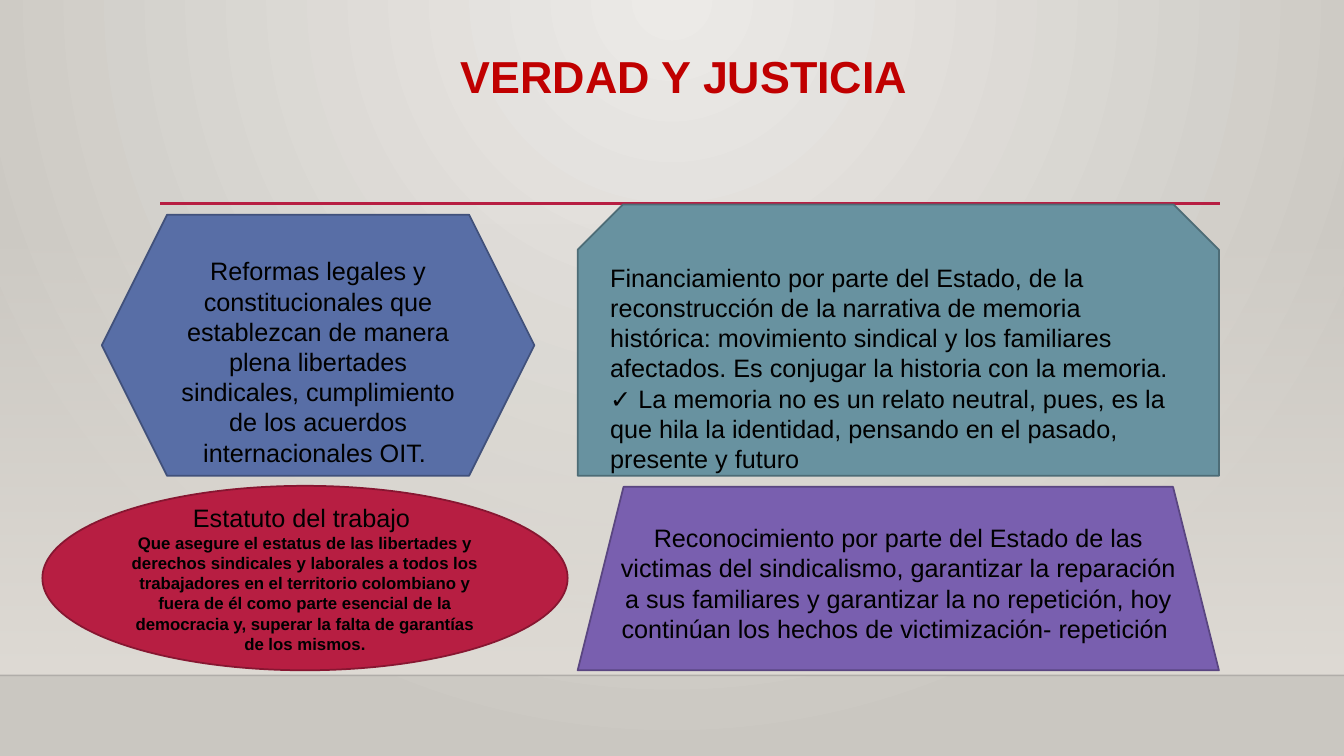
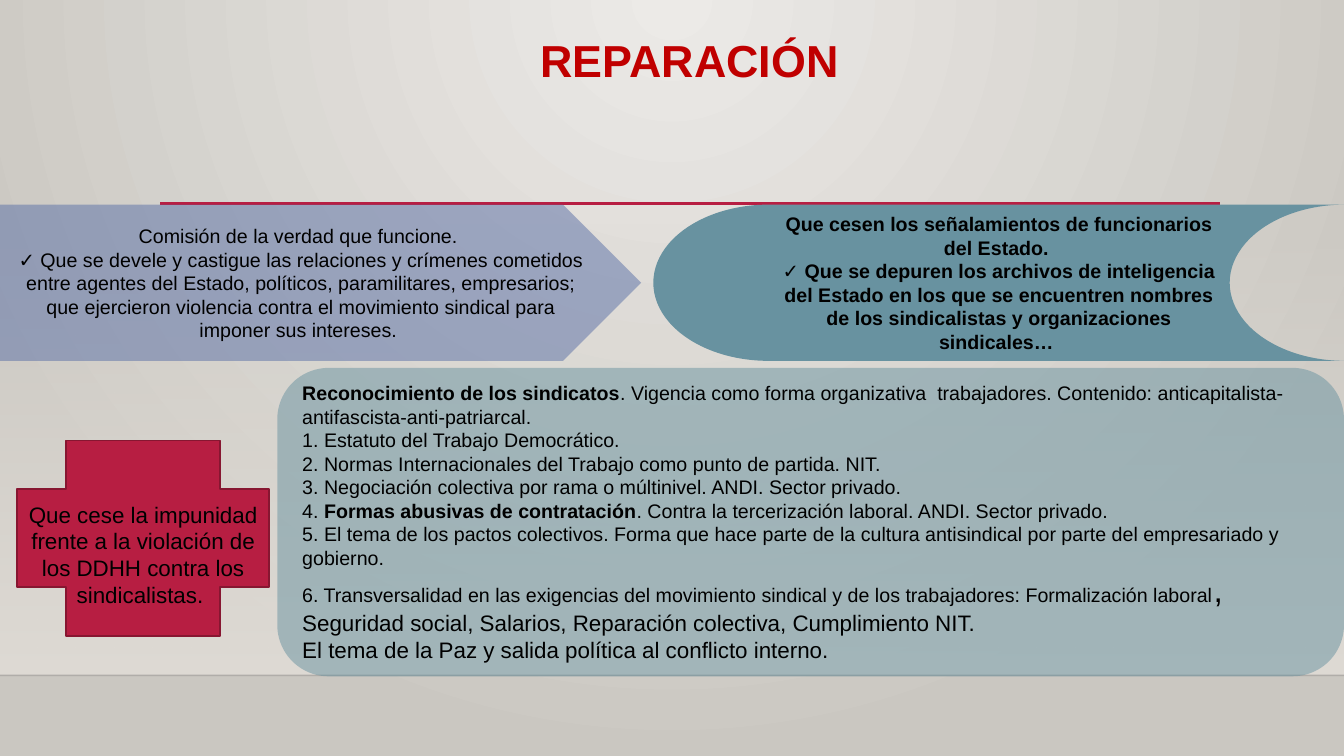
"""Two slides on truth, justice and reparation for trade unions."""
from lxml import etree
from pptx import Presentation
from pptx.dml.color import RGBColor
from pptx.enum import shapes, text
from pptx.oxml import ns
from pptx.util import Inches, Pt

FONT = "Arial"
HUE = {
    "ink": "000000", "title": "C00000", "glow": "ECEAE7", "edge": "CAC7C1",
    "band": "DFDBD5", "floor": "000001", "red": "B71E42", "wine": "871631",
    "blue": "586EA6", "navy": "41517B", "teal": "6892A0", "slate": "4D6C76",
    "plum": "795FAF", "grape": "5A4681",
}
KIND = shapes.MSO_SHAPE
MID, LEFT = text.PP_ALIGN.CENTER, text.PP_ALIGN.LEFT
TOP, HALF = text.MSO_ANCHOR.TOP, text.MSO_ANCHOR.MIDDLE
DROP = 0.37

DECK = [
    {
        "title": "VERDAD Y JUSTICIA ", "top": 0.49,
        "parts": [
            {"kind": KIND.HEXAGON, "at": (1.01, 2.13, 4.29, 2.59),
             "fill": "blue", "line": "navy", "form": {"size": 18, "inset": DROP},
             "text": ["Reformas legales y constitucionales que establezcan de manera plena "
                      "libertades sindicales, cumplimiento de los acuerdos internacionales OIT. "]},
            {"kind": KIND.SNIP_2_SAME_RECTANGLE, "at": (5.73, 2.03, 6.36, 2.69),
             "fill": "teal", "line": "slate",
             "form": {"size": 18, "inset": DROP, "align": LEFT},
             "text": ["Financiamiento por parte del Estado, de la reconstrucción de la narrativa "
                      "de memoria histórica: movimiento sindical y los familiares afectados. "
                      "Es conjugar la historia con la memoria.",
                      "✓ La memoria no es un relato neutral, pues, es la que hila la identidad, "
                      "pensando en el pasado, presente y futuro"]},
            {"kind": KIND.OVAL, "at": (0.42, 4.82, 5.21, 1.83),
             "fill": "red", "line": "wine", "form": {"size": 18},
             "text": ["Estatuto del trabajo ",
                      [("Que asegure el estatus de las libertades y derechos sindicales y "
                        "laborales a todos los trabajadores en el territorio colombiano y fuera "
                        "de él como parte esencial de la democracia y, superar la falta de "
                        "garantías de los mismos.", {"size": 12, "bold": True})]]},
            {"kind": KIND.TRAPEZOID, "at": (5.73, 4.83, 6.36, 1.82),
             "fill": "plum", "line": "grape", "form": {"size": 18},
             "text": ["Reconocimiento por parte del Estado de las victimas del sindicalismo, "
                      "garantizar la reparación a sus familiares y garantizar la no repetición, "
                      "hoy continúan los hechos de victimización- repetición "]},
        ],
    },
    {
        "title": "REPARACIÓN", "top": 0.34,
        "parts": [
            {"kind": KIND.PENTAGON, "at": (0, 2.03, 6.36, 1.55),
             "fill": "blue", "alpha": 50, "form": {"size": 14},
             "text": ["Comisión de la verdad que funcione. ",
                      "✓ Que se devele y castigue las relaciones y crímenes cometidos entre "
                      "agentes del Estado, políticos, paramilitares, empresarios; que ejercieron "
                      "violencia contra el movimiento sindical para imponer sus intereses. "]},
            {"kind": KIND.FLOWCHART_STORED_DATA, "at": (6.48, 2.03, 6.86, 1.55),
             "fill": "teal", "form": {"size": 14, "bold": True},
             "text": ["Que cesen los señalamientos de funcionarios del Estado. ",
                      "✓ Que se depuren los archivos de inteligencia del Estado en los que se "
                      "encuentren nombres de los sindicalistas y organizaciones sindicales… "]},
            {"kind": KIND.CROSS, "at": (0.17, 4.37, 2.5, 1.94),
             "fill": "red", "line": "wine", "form": {"size": 16, "inset": DROP},
             "text": ["Que cese la impunidad frente a la violación de los DDHH contra los "
                      "sindicalistas. "]},
            {"kind": KIND.FLOWCHART_ALTERNATE_PROCESS, "at": (2.75, 3.65, 10.58, 3.06),
             "fill": "teal", "alpha": 50, "form": {"size": 14, "align": LEFT},
             "text": [[("Reconocimiento de los sindicatos", {"bold": True}),
                       (". Vigencia como forma organizativa  trabajadores. Contenido: "
                        "anticapitalista-antifascista-anti-patriarcal.", {})],
                      "1. Estatuto del Trabajo Democrático.",
                      "2. Normas Internacionales del Trabajo como punto de partida. NIT.",
                      "3. Negociación colectiva por rama o múltinivel. ANDI. Sector privado.",
                      [("4. ", {}), ("Formas abusivas de contratación", {"bold": True}),
                       (". Contra la tercerización laboral. ANDI. Sector privado.", {})],
                      "5. El tema de los pactos colectivos. Forma que hace parte de la cultura "
                      "antisindical por parte del empresariado y gobierno.",
                      [("6. Transversalidad en las exigencias del movimiento sindical y de los "
                        "trabajadores: Formalización laboral", {}), (", ", {"size": 24}),
                       ("Seguridad social, Salarios, Reparación colectiva, Cumplimiento NIT.",
                        {"size": 16})],
                      [("El tema de la Paz y salida política al conflicto interno.",
                        {"size": 16})]]},
        ],
    },
]


def rgb(name):
    return RGBColor.from_string(HUE[name])


def sub(node, tag, **attrs):
    return etree.SubElement(node, ns.qn(tag), attrs)


def fade(node, share):
    sub(node, "a:alpha", val=str(share * 1000))


def blend(fill, *names):
    fill.gradient()
    for stop, name in zip(fill.gradient_stops, names):
        stop.color.rgb = rgb(name)


def write(shape, paras, size=18, hue="ink", bold=False, align=MID, anchor=HALF,
          inset=0.05, gap=None):
    frame = shape.text_frame
    frame.word_wrap = True
    frame.vertical_anchor = anchor
    frame.margin_top = Inches(inset)
    for num, runs in enumerate(paras):
        para = frame.add_paragraph() if num else frame.paragraphs[0]
        para.alignment = align
        if gap:
            para.line_spacing = gap
        for words, form in [(runs, {})] if isinstance(runs, str) else runs:
            run = para.add_run()
            run.text = words
            font = run.font
            font.name = FONT
            font.size = Pt(form.get("size", size))
            font.bold = form.get("bold", bold)
            font.color.rgb = rgb(hue)


def block(slide, kind, at):
    shape = slide.shapes.add_shape(kind, *map(Inches, at))
    shape.shadow.inherit = False
    shape.line.fill.background()
    return shape


def rule(slide, left, right, y, hue, width):
    line = slide.shapes.add_connector(
        shapes.MSO_CONNECTOR.STRAIGHT, *map(Inches, (left, y, right, y)))
    line.line.color.rgb = rgb(hue)
    line.line.width = Pt(width)
    sub(line._element.spPr, "a:effectLst")
    return line


def stage(slide, title, top):
    fill = slide.background.fill
    blend(fill, "glow", "edge")
    lin = next(slide._element.iter(ns.qn("a:lin")))
    grad = lin.getparent()
    ring = etree.Element(ns.qn("a:path"), path="circle")
    sub(ring, "a:fillToRect", l="43000", t="0", r="43000", b="100000")
    grad.replace(lin, ring)

    band = block(slide, KIND.RECTANGLE, (0, 2.21, 13.33, 4.49))
    blend(band.fill, "band", "band")
    band.fill.gradient_angle = 270
    fade(next(band._element.spPr.iter(ns.qn("a:srgbClr"))), 0)

    floor = rule(slide, 0, 13.33, 6.7, "floor", 1)
    fade(next(floor._element.spPr.iter(ns.qn("a:srgbClr"))), 20)
    rule(slide, 1.59, 12.1, 2.02, "red", 2.5)

    head = slide.shapes.add_textbox(*map(Inches, (1.59, top, 10.5, 1.15)))
    write(head, [title], size=32, hue="title", bold=True, anchor=TOP, gap=0.9)


def draw(slide, part):
    shape = block(slide, part["kind"], part["at"])
    shape.fill.solid()
    shape.fill.fore_color.rgb = rgb(part["fill"])
    if "alpha" in part:
        fade(next(shape._element.spPr.iter(ns.qn("a:srgbClr"))), part["alpha"])
    if "line" in part:
        shape.line.color.rgb = rgb(part["line"])
        shape.line.width = Pt(1.25)
    write(shape, part["text"], **part["form"])


def main():
    deck = Presentation()
    deck.slide_width, deck.slide_height = Inches(13.33), Inches(7.5)
    for page in DECK:
        slide = deck.slides.add_slide(deck.slide_layouts[6])
        stage(slide, page["title"], page["top"])
        for part in page["parts"]:
            draw(slide, part)
    deck.save("out.pptx")


if __name__ == "__main__":
    main()
